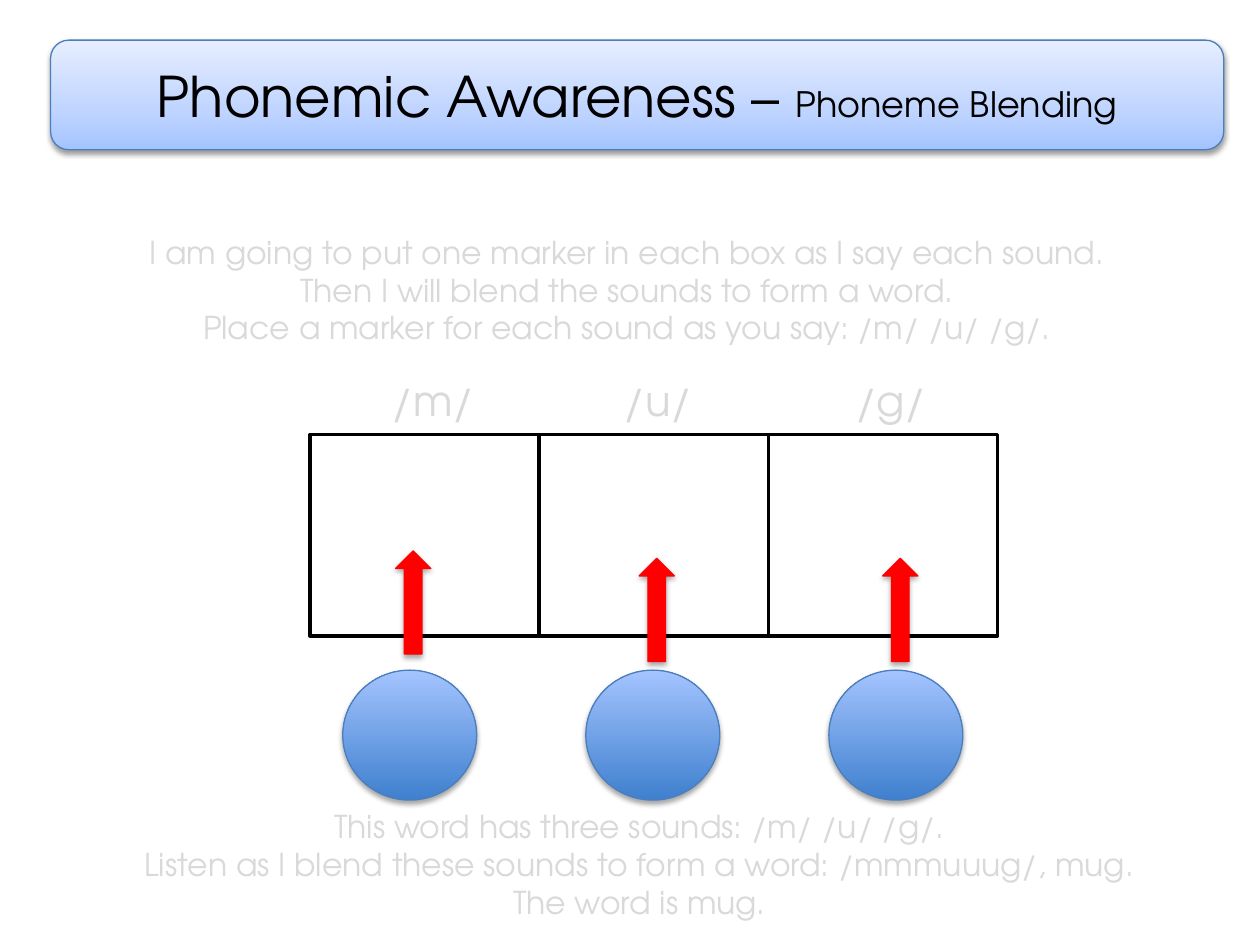
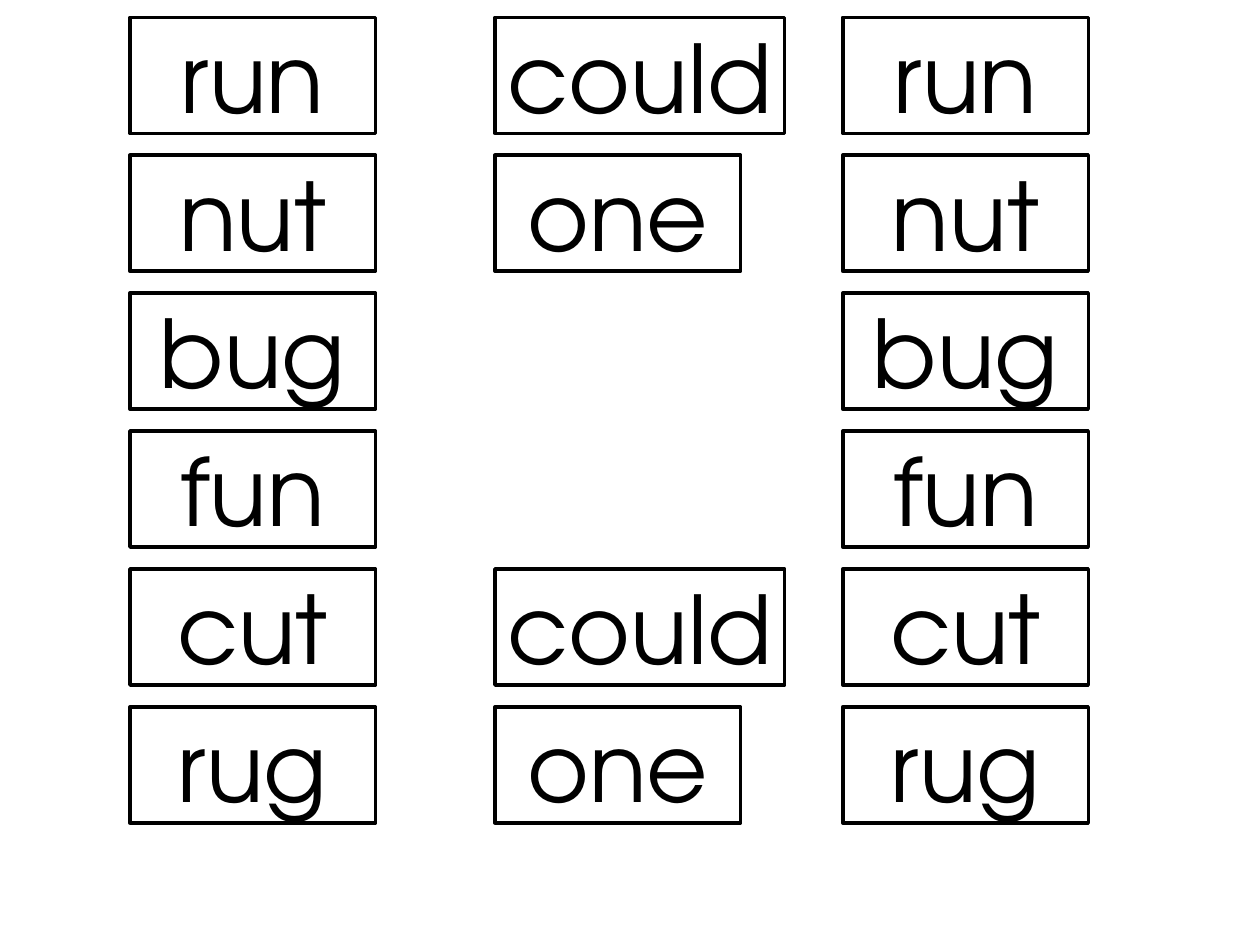
from dataclasses import dataclass

from lxml import etree
from pptx import Presentation
from pptx import util as u
from pptx.dml.color import RGBColor
from pptx.enum import shapes, text
from pptx.oxml import ns

Preset = shapes.MSO_SHAPE


@dataclass(frozen=True)
class Theme:
    """Colours, gradients, shadows and type sizes shared by the slides."""
    font: str = "TeX Gyre Adventor"
    ink: str = "000000"
    paper: str = "FFFFFF"
    script: str = "D9D9D9"
    arrow: str = "FF0000"
    edge: str = "4B7EBC"
    banner: tuple = ((0, "A4C4FF"), (35, "BFD4FF"), (100, "E6EEFF"))
    marker: tuple = ((0, "3F80CE"), (100, "A4C4FF"))
    banner_shadow: tuple = (38, 1.6)
    marker_shadow: tuple = (35, 1.8)
    title: int = 32
    subtitle: int = 20
    body: int = 18
    sound: int = 24
    word: int = 54
    thin: float = 0.75
    thick: float = 2


class Deck:
    """Draws styled elements on the current slide; lengths are centimetres."""

    def __init__(self, theme):
        self.theme = theme
        self.show = Presentation()
        self.show.slide_width, self.show.slide_height = u.Cm(25.4), u.Cm(19.05)
        self.slide = None

    def new_slide(self):
        self.slide = self.show.slides.add_slide(self.show.slide_layouts[6])

    def style(self, run, size, color):
        run.font.name = self.theme.font
        run.font.size = u.Pt(size)
        run.font.color.rgb = RGBColor.from_string(color)

    def shape(self, preset, area, fill, edge, weight, shadow=None):
        figure = self.slide.shapes.add_shape(preset, *map(u.Cm, area))
        figure.line.color.rgb = RGBColor.from_string(edge)
        figure.line.width = u.Pt(weight)
        if isinstance(fill, str):
            figure.fill.solid()
            figure.fill.fore_color.rgb = RGBColor.from_string(fill)
        else:
            self.gradient(figure, fill)
        figure.shadow.inherit = False
        if shadow:
            self.cast_shadow(figure, *shadow)
        return figure

    def gradient(self, figure, stops):
        figure.fill.gradient()
        figure.fill.gradient_angle = 90
        stop_list = figure.element.spPr.find(".//" + ns.qn("a:gsLst"))
        for old_stop in list(stop_list):
            stop_list.remove(old_stop)
        for percent, color in stops:
            stop = etree.SubElement(stop_list, ns.qn("a:gs"), pos=str(percent * 1000))
            etree.SubElement(stop, ns.qn("a:srgbClr"), val=color)

    def cast_shadow(self, figure, opacity, distance):
        effects = figure.element.spPr.find(ns.qn("a:effectLst"))
        outer = etree.SubElement(
            effects, ns.qn("a:outerShdw"), blurRad=str(u.Pt(3.1)),
            dist=str(u.Pt(distance)), dir="5400000", rotWithShape="0")
        color = etree.SubElement(outer, ns.qn("a:srgbClr"), val=self.theme.ink)
        etree.SubElement(color, ns.qn("a:alpha"), val=str(opacity * 1000))

    def centre(self, figure, parts):
        figure.text_frame.vertical_anchor = text.MSO_ANCHOR.MIDDLE
        line = figure.text_frame.paragraphs[0]
        line.alignment = text.PP_ALIGN.CENTER
        for wording, size in parts:
            run = line.add_run()
            run.text = wording
            self.style(run, size, self.theme.ink)

    def banner(self, area, heading, topic):
        t = self.theme
        band = self.shape(Preset.ROUNDED_RECTANGLE, area, t.banner, t.edge,
                          t.thin, t.banner_shadow)
        self.centre(band, [(heading, t.title), (topic, t.subtitle)])

    def script(self, area, lines, size, align):
        frame = self.slide.shapes.add_textbox(*map(u.Cm, area)).text_frame
        frame.word_wrap = True
        frame.text = "\n".join(lines)
        for line in frame.paragraphs:
            line.alignment = align
            self.style(line.runs[0], size, self.theme.script)

    def box(self, area):
        t = self.theme
        return self.shape(Preset.RECTANGLE, area, t.paper, t.ink, t.thick)

    def word_card(self, area, word):
        self.centre(self.box(area), [(word, self.theme.word)])

    def marker(self, area):
        t = self.theme
        self.shape(Preset.OVAL, area, t.marker, t.edge, t.thin, t.marker_shadow)

    def up_arrow(self, area):
        t = self.theme
        arrow = self.shape(Preset.RIGHT_ARROW, area, t.arrow, t.arrow,
                           t.thin, t.marker_shadow)
        arrow.rotation = 270


def blending_slide(deck):
    """Sound boxes with one marker for each sound of the word."""
    deck.new_slide()
    deck.banner((1.02, 0.81, 23.65, 2.21), "Phonemic Awareness – ", "Phoneme Blending")
    deck.script((1.45, 4.57, 22.38, 2.57), [
        "I am going to put one marker in each box as I say each sound.",
        "Then I will blend the sounds to form a word.",
        "Place a marker for each sound as you say: /m/ /u/ /g/.",
    ], deck.theme.body, text.PP_ALIGN.CENTER)
    sounds = ["/m/", "/u/", "/g/"]
    for i in range(len(sounds)):
        deck.box((6.25 + 4.62 * i, 8.76, 4.62, 4.06))
    for i in range(len(sounds)):
        deck.marker((6.91 + 4.9 * i, 13.51, 2.7, 2.62))
    for i, arrow_top in enumerate([11.79, 11.94, 11.94]):
        deck.up_arrow((7.29 + 4.91 * i, arrow_top, 2.08, 0.71))
    for i, sound in enumerate(sounds):
        deck.script((7.65 + 4.67 * i, 7.42, 2.31, 1.27), [sound],
                    deck.theme.sound, text.PP_ALIGN.LEFT)
    deck.script((1.7, 16.15, 22.38, 2.57), [
        "This word has three sounds: /m/ /u/ /g/.",
        "Listen as I blend these sounds to form a word: /mmmuuug/, mug.",
        "The word is mug.",
    ], deck.theme.body, text.PP_ALIGN.CENTER)


def word_cards_slide(deck):
    """Three columns of word cards on six even rows."""
    deck.new_slide()
    decodable = ["run", "nut", "bug", "fun", "cut", "rug"]
    sight = ["could", "one", None, None, "could", "one"]
    for left, words in [(2.62, decodable), (9.98, sight), (16.99, decodable)]:
        for row, word in enumerate(words):
            if word:
                width = 5.84 if word == "could" else 4.95
                deck.word_card((left, 0.35 + 2.78 * row, width, 2.34), word)


def main():
    """Build both slides and save them."""
    deck = Deck(Theme())
    blending_slide(deck)
    word_cards_slide(deck)
    deck.show.save("out.pptx")


if __name__ == "__main__":
    main()
